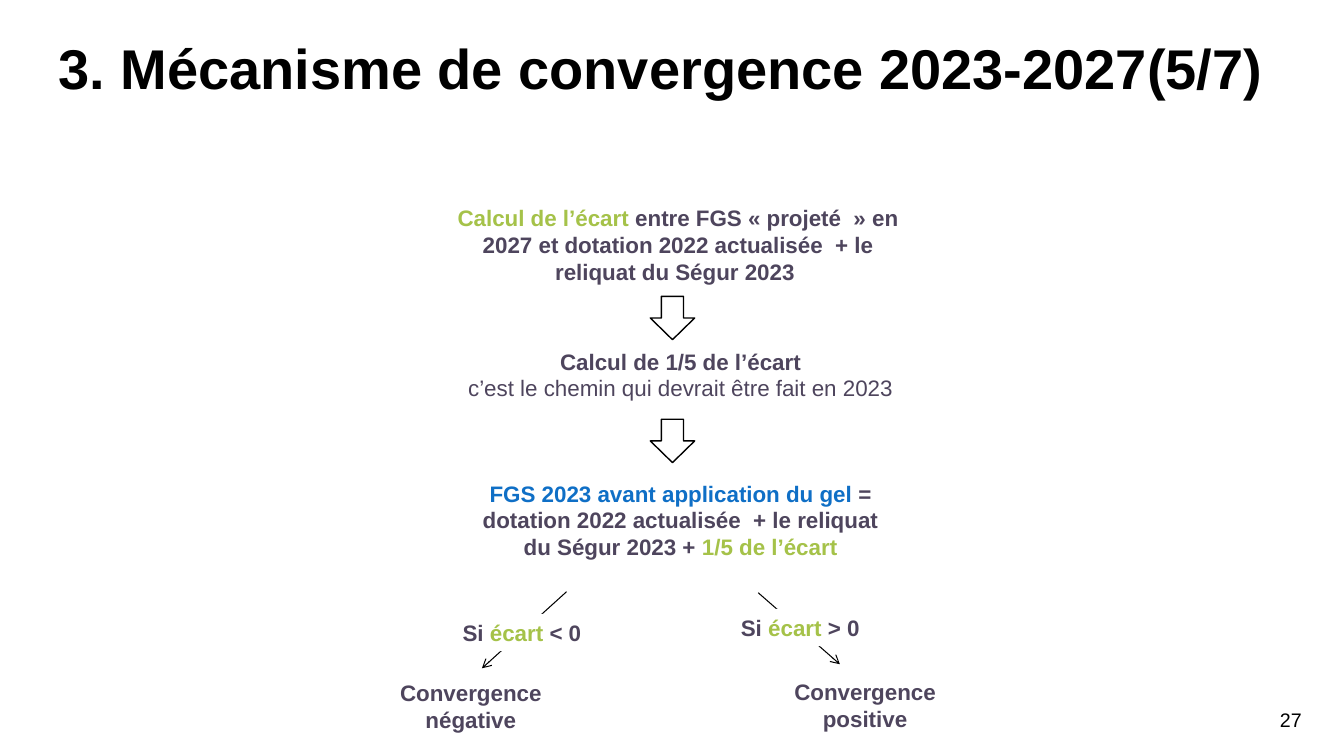
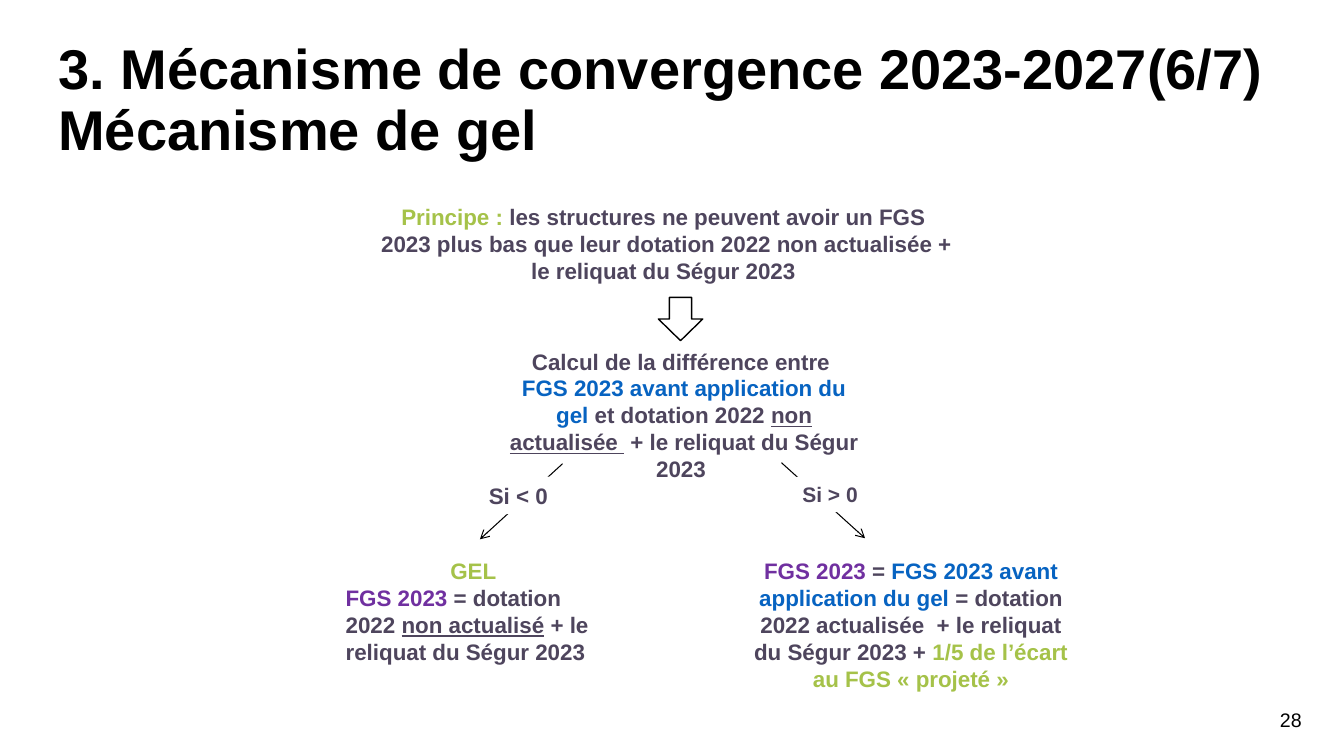
from lxml import etree
from pptx import Presentation
from pptx.dml.color import RGBColor
from pptx.enum.shapes import MSO_CONNECTOR, MSO_SHAPE
from pptx.enum.text import MSO_ANCHOR, MSO_AUTO_SIZE, PP_ALIGN
from pptx.oxml.ns import qn
from pptx.util import Inches, Pt

FONT = "Arial"
BLACK = RGBColor(0x00, 0x00, 0x00)
WHITE = RGBColor(0xFF, 0xFF, 0xFF)
SLATE = RGBColor(0x4E, 0x45, 0x5D)
GREEN = RGBColor(0xA5, 0xC2, 0x49)
BLUE = RGBColor(0x0F, 0x6F, 0xC6)
DEEP_BLUE = RGBColor(0x07, 0x63, 0xC1)
PURPLE = RGBColor(0x70, 0x30, 0xA0)

LEFT, CENTER, RIGHT = PP_ALIGN.LEFT, PP_ALIGN.CENTER, PP_ALIGN.RIGHT
ARROW_W, ARROW_H = 0.44, 0.43
TEXT_INDENT = 0.11


def para(*runs, align=CENTER, size=16, bold=True):
    """A paragraph; each run is (text, colour) or (text, colour, underlined)."""
    return {"runs": runs, "align": align, "size": size, "bold": bold}


# Content: steps are (left, top, width, height, paragraphs);
# labels are the same on a white panel that interrupts the branches
SLIDES = [
    {
        "number": 27,
        "title": "3. Mécanisme de convergence 2023-2027(5/7)",
        "branches": [((7.52, 5.88), (8.33, 6.59)), ((5.62, 5.87), (4.78, 6.63))],
        "steps": [
            (4.21, 1.98, 4.92, 1.16, [para(
                ("Calcul de l’écart ", GREEN),
                ("entre FGS « projeté  » en 2027 et dotation 2022 actualisée  "
                 "+ le reliquat du Ségur 2023 ", SLATE))]),
            (3.27, 3.4, 6.85, 0.64, [
                para(("Calcul de 1/5 de l’écart", SLATE)),
                para(("c’est le chemin qui devrait être fait en 2023", SLATE), bold=False)]),
            (4.56, 4.71, 4.27, 0.91, [para(
                ("FGS 2023 avant application du gel ", BLUE),
                ("= dotation 2022 actualisée  + le reliquat du Ségur 2023 + ", SLATE),
                ("1/5 de l’écart", GREEN))]),
        ],
        "arrow_center": 6.67,
        "arrow_tops": [2.94, 4.16],
        "labels": [
            (4.38, 6.09, 1.64, 0.37, [para(
                ("Si ", SLATE), ("écart ", GREEN), ("< 0", SLATE), align=LEFT)]),
            (7.14, 6.04, 1.64, 0.37, [para(
                ("Si ", SLATE), ("écart ", GREEN), ("> 0", SLATE), align=LEFT)]),
            (3.61, 6.69, 2.01, 0.64, [para(("Convergence négative", SLATE))]),
            (7.52, 6.68, 2.01, 0.64, [para(("Convergence positive", SLATE))]),
        ],
    },
    {
        "number": 28,
        "title": "3. Mécanisme de convergence 2023-2027(6/7)\nMécanisme de gel",
        "branches": [((7.75, 4.59), (8.58, 5.34)), ((5.58, 4.6), (4.76, 5.35))],
        "steps": [
            (3.51, 1.97, 6.09, 1.16, [para(
                ("Principe : ", GREEN),
                ("les structures ne peuvent avoir un FGS  2023 plus bas que leur dotation "
                 "2022 non actualisée + le reliquat du Ségur 2023 ", SLATE))]),
            (4.78, 3.4, 3.9, 1.7, [
                para(("Calcul de la différence entre ", SLATE)),
                para(("FGS 2023 avant application du gel ", DEEP_BLUE),
                     ("et dotation 2022 ", SLATE),
                     ("non actualisée ", SLATE, True),
                     (" + le reliquat du Ségur 2023 ", SLATE))]),
            (3.22, 5.48, 2.84, 1.21, [
                para(("GEL", GREEN)),
                para(("FGS 2023 ", PURPLE),
                     ("= dotation 2022 ", SLATE),
                     ("non actualisé", SLATE, True),
                     (" + le reliquat du Ségur 2023", SLATE), align=LEFT)]),
            (7.27, 5.48, 3.42, 1.45, [para(
                ("FGS 2023 ", PURPLE),
                ("= ", SLATE),
                ("FGS 2023 avant application du gel ", DEEP_BLUE),
                ("= dotation 2022 actualisée  + le reliquat du Ségur 2023 + ", SLATE),
                ("1/5 de l’écart au FGS « projeté »", GREEN))]),
        ],
        "arrow_center": 6.75,
        "arrow_tops": [2.95],
        "labels": [
            (7.75, 4.73, 1.21, 0.35, [para(("Si > 0", SLATE), align=LEFT, size=15)]),
            (4.64, 4.73, 1.35, 0.37, [para(("Si < 0", SLATE), align=LEFT)]),
        ],
    },
]


def set_font(paragraph, size, bold):
    font = paragraph.font
    font.name, font.size, font.bold = FONT, Pt(size), bold


def add_heading(slide, text, box, size, bold=False, align=LEFT, spacing=None):
    """Plain black text used for the title and the page number."""
    frame = slide.shapes.add_textbox(*map(Inches, box)).text_frame
    frame.word_wrap = True
    paragraph = frame.paragraphs[0]
    paragraph.text = text
    paragraph.alignment = align
    paragraph.line_spacing = spacing
    set_font(paragraph, size, bold)
    paragraph.font.color.rgb = BLACK


def add_branch(slide, start, end):
    branch = slide.shapes.add_connector(
        MSO_CONNECTOR.STRAIGHT, *map(Inches, start + end))
    branch.line.color.rgb = BLACK
    branch.line.width = Pt(0.75)
    etree.SubElement(branch.line._get_or_add_ln(), qn("a:tailEnd"), type="arrow")
    etree.SubElement(branch._element.spPr, qn("a:effectLst"))


def add_white_shape(slide, preset, box):
    shape = slide.shapes.add_shape(preset, *map(Inches, box))
    shape.shadow.inherit = False
    shape.fill.solid()
    shape.fill.fore_color.rgb = WHITE
    return shape


def write(frame, paragraphs):
    frame.word_wrap = True
    frame.auto_size = MSO_AUTO_SIZE.SHAPE_TO_FIT_TEXT
    frame.vertical_anchor = MSO_ANCHOR.TOP
    for index, content in enumerate(paragraphs):
        paragraph = frame.add_paragraph() if index else frame.paragraphs[0]
        paragraph.alignment = content["align"]
        paragraph._p.get_or_add_pPr().set("marL", str(Inches(TEXT_INDENT)))
        set_font(paragraph, content["size"], content["bold"])
        for text, colour, *underlined in content["runs"]:
            run = paragraph.add_run()
            run.text = text
            run.font.color.rgb = colour
            if underlined:
                run.font.underline = True


def build_slide(prs, content):
    slide = prs.slides.add_slide(prs.slide_layouts[6])
    # Page number and title
    add_heading(slide, str(content["number"]), (10.01, 6.97, 3, 0.4), 14, align=RIGHT)
    add_heading(slide, content["title"], (0.48, 0.36, 12.86, 1.45), 40,
                bold=True, spacing=0.9)
    # Branches lie behind the labels
    for start, end in content["branches"]:
        add_branch(slide, start, end)
    # Steps
    for *box, paragraphs in content["steps"]:
        write(slide.shapes.add_textbox(*map(Inches, box)).text_frame, paragraphs)
    # Block arrows between steps
    for top in content["arrow_tops"]:
        box = (content["arrow_center"] - ARROW_W / 2, top, ARROW_W, ARROW_H)
        arrow = add_white_shape(slide, MSO_SHAPE.DOWN_ARROW, box)
        arrow.line.color.rgb = BLACK
        arrow.line.width = Pt(1)
    # Conditions and outcomes
    for *box, paragraphs in content["labels"]:
        label = add_white_shape(slide, MSO_SHAPE.RECTANGLE, box)
        label.line.fill.background()
        write(label.text_frame, paragraphs)


def main():
    prs = Presentation()
    prs.slide_width, prs.slide_height = Inches(13.33), Inches(7.5)
    for content in SLIDES:
        build_slide(prs, content)
    prs.save("out.pptx")


if __name__ == "__main__":
    main()
